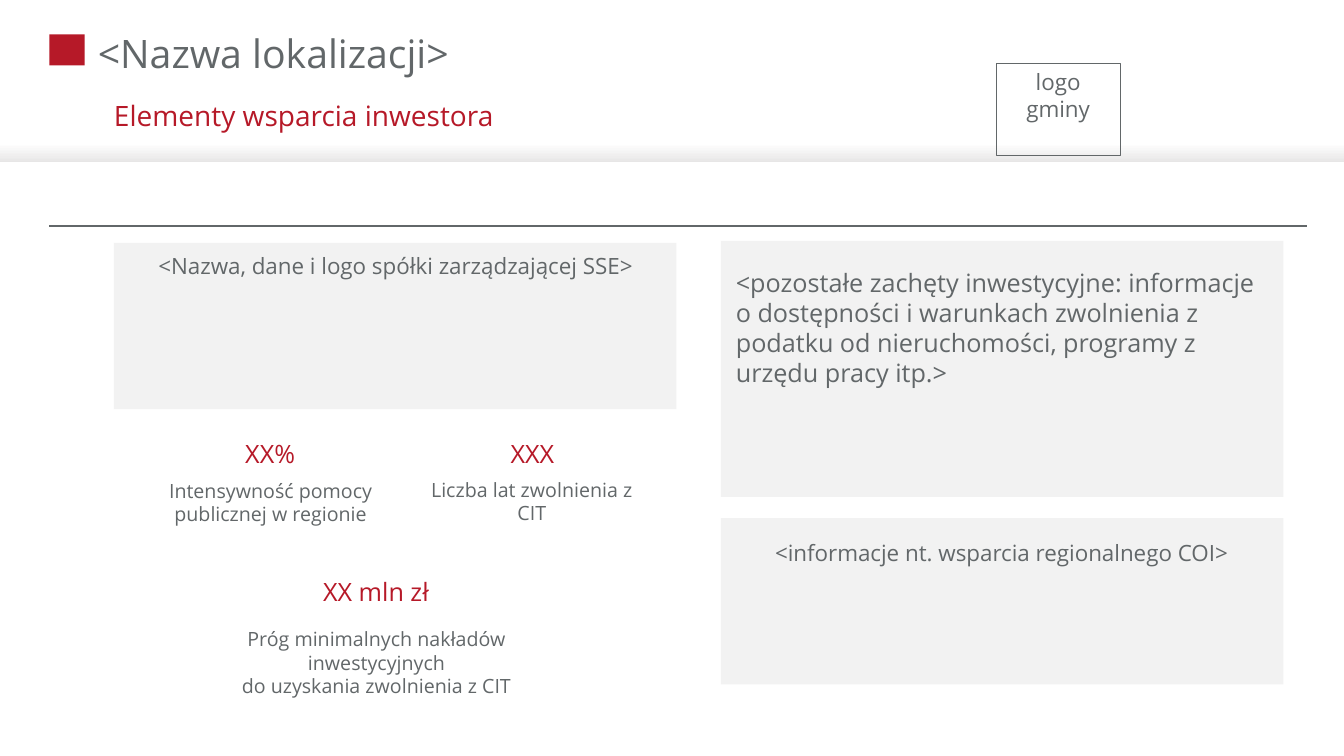
from pptx import Presentation
from pptx.dml.color import RGBColor
from pptx.enum import shapes, text
from pptx.oxml.ns import qn
from pptx.util import Inches, Pt

FONT = "Open Sans"
RED = RGBColor(0xB6, 0x19, 0x28)
GRAY = RGBColor(0x62, 0x67, 0x69)
PANEL = RGBColor(0xF2, 0xF2, 0xF2)
WHITE = RGBColor(0xFF, 0xFF, 0xFF)
BAND = RGBColor(0xE7, 0xE6, 0xE6)

LEFT, CENTER = text.PP_ALIGN.LEFT, text.PP_ALIGN.CENTER
TOP, MIDDLE, BOTTOM = (text.MSO_ANCHOR.TOP, text.MSO_ANCHOR.MIDDLE,
                       text.MSO_ANCHOR.BOTTOM)

PANELS = [(7.15, 2.39, 2.54), (1.13, 2.41, 1.65), (7.15, 5.14, 1.65)]
PANEL_TEXTS = [
    (7.2, 2.6, 1.31, "<pozostałe zachęty inwestycyjne: informacje o dostępności "
     "i warunkach zwolnienia z podatku od nieruchomości, programy z urzędu "
     "pracy itp.>", 18, LEFT),
    (1.16, 2.45, 0.37, "<Nazwa, dane i logo spółki zarządzającej SSE>", 16, CENTER),
    (7.17, 5.3, 0.37, "<informacje nt. wsparcia regionalnego COI>", 16, CENTER),
]
# value, its position and anchor, then caption and its box
INDICATORS = [
    ("XX%", 1.96, 4.3, BOTTOM,
     "Intensywność pomocy publicznej w regionie", (1.45, 4.7, 2.47, 0.57)),
    ("XXX", 4.56, 4.3, BOTTOM,
     "Liczba lat zwolnienia z CIT", (4.03, 4.69, 2.49, 0.57)),
    ("XX mln zł", 3.01, 5.67, TOP,
     "Próg minimalnych nakładów inwestycyjnych\ndo uzyskania zwolnienia z CIT",
     (1.73, 6.17, 4.01, 0.8)),
]


def write(sp, content, size, color, align=CENTER, anchor=TOP):
    tf = sp.text_frame
    tf.text = content
    tf.word_wrap = True
    tf.auto_size = text.MSO_AUTO_SIZE.NONE
    tf.vertical_anchor = anchor
    for p in tf.paragraphs:
        p.alignment = align
        p.space_before = Pt(0)
        for r in p.runs:
            r.font.name = FONT
            r.font.size = Pt(size)
            r.font.color.rgb = color


def add_text(s, box, *args):
    write(s.shapes.add_textbox(*map(Inches, box)), *args)


def add_rect(s, box, fill=None):
    sp = s.shapes.add_shape(shapes.MSO_SHAPE.RECTANGLE, *map(Inches, box))
    sp.shadow.inherit = False
    sp.line.fill.background()
    if fill is None:
        sp.fill.background()
    else:
        sp.fill.solid()
        sp.fill.fore_color.rgb = fill
    return sp


def fill_heading(sp, box, content, size, color):
    """Move a placeholder and set it as one line without bullet or insets."""
    sp.left, sp.top, sp.width, sp.height = map(Inches, box)
    write(sp, content, size, color, LEFT, MIDDLE)
    tf = sp.text_frame
    tf.margin_left = tf.margin_right = tf.margin_top = tf.margin_bottom = 0
    p = tf.paragraphs[0]
    p.line_spacing = 0.9
    pPr = p._p.get_or_add_pPr()
    pPr.set("marL", "0")
    pPr.set("indent", "0")
    pPr.append(pPr.makeelement(qn("a:buNone"), {}))


def add_header(s):
    band = add_rect(s, (0, 1.42, 13.33, 0.19))
    band.fill.gradient()
    band.fill.gradient_angle = 270
    for stop, color in zip(band.fill.gradient_stops, (WHITE, BAND)):
        stop.color.rgb = color

    add_rect(s, (0.49, 0.34, 0.35, 0.31), RED)

    logo_frame = add_rect(s, (9.88, 0.63, 1.23, 0.91))
    logo_frame.line.color.rgb = GRAY
    logo_frame.line.width = Pt(0.75)
    write(logo_frame, "logo gminy", 16, GRAY)

    fill_heading(s.shapes.title, (0.97, 0.29, 8.62, 0.52),
                 "<Nazwa lokalizacji>", 28, GRAY)
    fill_heading(s.placeholders[1], (1.13, 0.87, 8.62, 0.59),
                 "Elementy wsparcia inwestora", 20, RED)


def add_rule(s):
    y = Inches(2.24)
    line = s.shapes.add_connector(shapes.MSO_CONNECTOR.STRAIGHT,
                                  Inches(0.49), y, Inches(12.96), y)
    line.line.color.rgb = GRAY
    line.line.width = Pt(1.5)
    spPr = line._element.spPr
    spPr.append(spPr.makeelement(qn("a:effectLst"), {}))


def add_indicator(s, value, left, top, anchor, caption, caption_box):
    add_text(s, (left, top, 1.44, 0.4), value, 18, RED, CENTER, anchor)
    add_text(s, caption_box, caption, 14, GRAY)


def main():
    prs = Presentation()
    prs.slide_width, prs.slide_height = Inches(13.33), Inches(7.5)
    s = prs.slides.add_slide(prs.slide_layouts[1])
    add_header(s)
    add_rule(s)
    for left, top, height in PANELS:
        add_rect(s, (left, top, 5.58, height), PANEL)
    for left, top, height, content, size, align in PANEL_TEXTS:
        add_text(s, (left, top, 5.53, height), content, size, GRAY, align)
    for indicator in INDICATORS:
        add_indicator(s, *indicator)
    prs.save("out.pptx")


if __name__ == "__main__":
    main()
